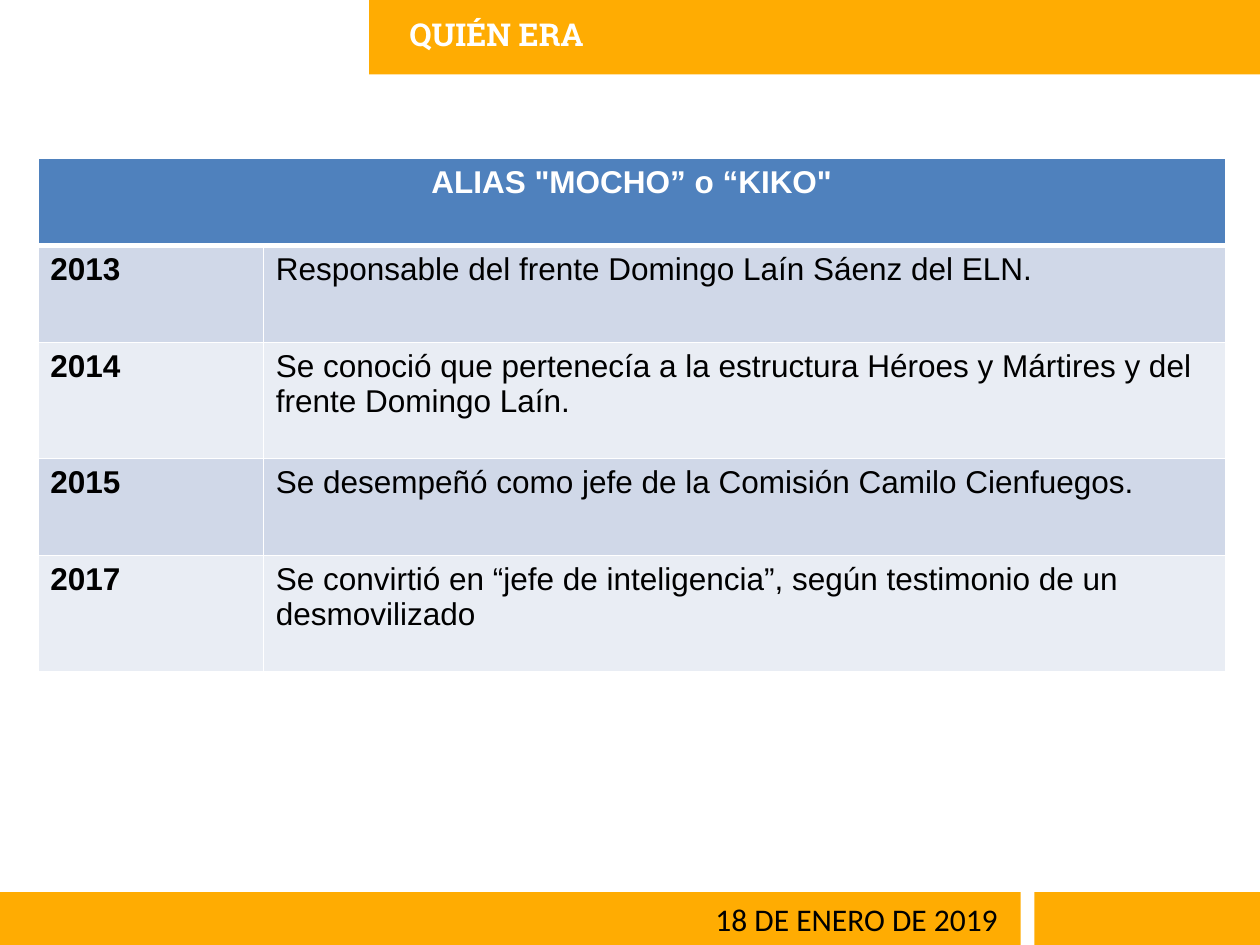
from lxml import etree
from pptx import Presentation
from pptx.dml.color import RGBColor
from pptx.enum.shapes import MSO_SHAPE
from pptx.enum.text import PP_ALIGN
from pptx.oxml.ns import qn
from pptx.util import Inches, Pt

RECT = MSO_SHAPE.RECTANGLE
CENTER = PP_ALIGN.CENTER

COLORS = {
    "amber": "FFAC02", "white": "FFFFFF", "black": "000000",
    "header": "4F81BD", "odd": "D0D8E8", "even": "E9EDF4",
}
BARS = [
    ((2.93, 0, 7.07, 0.59), "amber"),
    ((0, 7.08, 10, 0.42), "amber"),
    ((8.1, 7.05, 0.11, 0.45), "white"),
]
LABELS = [
    ((3.15, 0.07, 4.73, 0.4), "QUIÉN ERA", "Roboto Slab", "white", True),
    ((5.58, 7.09, 3, 0.4), "18 DE ENERO DE 2019", "Calibri", "black", False),
]
TABLE_TITLE = 'ALIAS "MOCHO” o “KIKO"'
EVENTS = [
    ("2013", "Responsable del frente Domingo Laín Sáenz del ELN."),
    ("2014", "Se conoció que pertenecía a la estructura Héroes y Mártires y del frente Domingo Laín."),
    ("2015", "Se desempeñó como jefe de la Comisión Camilo Cienfuegos."),
    ("2017", "Se convirtió en “jefe de inteligencia”, según testimonio de un desmovilizado"),
]
COL_WIDTHS = [1.79, 7.64]
ROW_HEIGHTS = [0.69, 0.77, 0.92, 0.77, 0.92]


def rgb(name):
    return RGBColor.from_string(COLORS[name])


def write(tf, text, font, color, bold):
    tf.text = text
    f = tf.paragraphs[0].runs[0].font
    f.name, f.size, f.bold = font, Pt(18), bold
    f.color.rgb = rgb(color)


def set_borders(cell, bottom):
    tc_pr = cell._tc.get_or_add_tcPr()
    widths = {"lnL": 1, "lnR": 1, "lnT": 1, "lnB": bottom}
    for i, (tag, width) in enumerate(widths.items()):
        ln = etree.Element(qn("a:" + tag), w=str(Pt(width)))
        fill = etree.SubElement(ln, qn("a:solidFill"))
        etree.SubElement(fill, qn("a:srgbClr"), val=COLORS["white"])
        tc_pr.insert(i, ln)


def fill_cell(cell, text, fill, color="black", bold=False, bottom=1):
    write(cell.text_frame, text, "Arial", color, bold)
    cell.fill.solid()
    cell.fill.fore_color.rgb = rgb(fill)
    set_borders(cell, bottom)


prs = Presentation()
prs.slide_width, prs.slide_height = Inches(10), Inches(7.5)
s = prs.slides.add_slide(prs.slide_layouts[6])

for box, color in BARS:
    bar = s.shapes.add_shape(RECT, *map(Inches, box))
    bar.shadow.inherit = False
    bar.fill.solid()
    bar.fill.fore_color.rgb = rgb(color)
    bar.line.fill.background()

for box, text, font, color, bold in LABELS:
    tf = s.shapes.add_textbox(*map(Inches, box)).text_frame
    tf.word_wrap = True
    write(tf, text, font, color, bold)

table = s.shapes.add_table(
    len(ROW_HEIGHTS), len(COL_WIDTHS), Inches(0.3), Inches(1.26),
    Inches(sum(COL_WIDTHS)), Inches(sum(ROW_HEIGHTS))).table
for col, width in zip(table.columns, COL_WIDTHS):
    col.width = Inches(width)
for row, height in zip(table.rows, ROW_HEIGHTS):
    row.height = Inches(height)

title = table.cell(0, 0)
title.merge(table.cell(0, 1))
fill_cell(title, TABLE_TITLE, "header", "white", True, bottom=3)
title.text_frame.paragraphs[0].alignment = CENTER

for i, (year, event) in enumerate(EVENTS, 1):
    band = "odd" if i % 2 else "even"
    fill_cell(table.cell(i, 0), year, band, bold=True)
    fill_cell(table.cell(i, 1), event, band)

prs.save("out.pptx")
